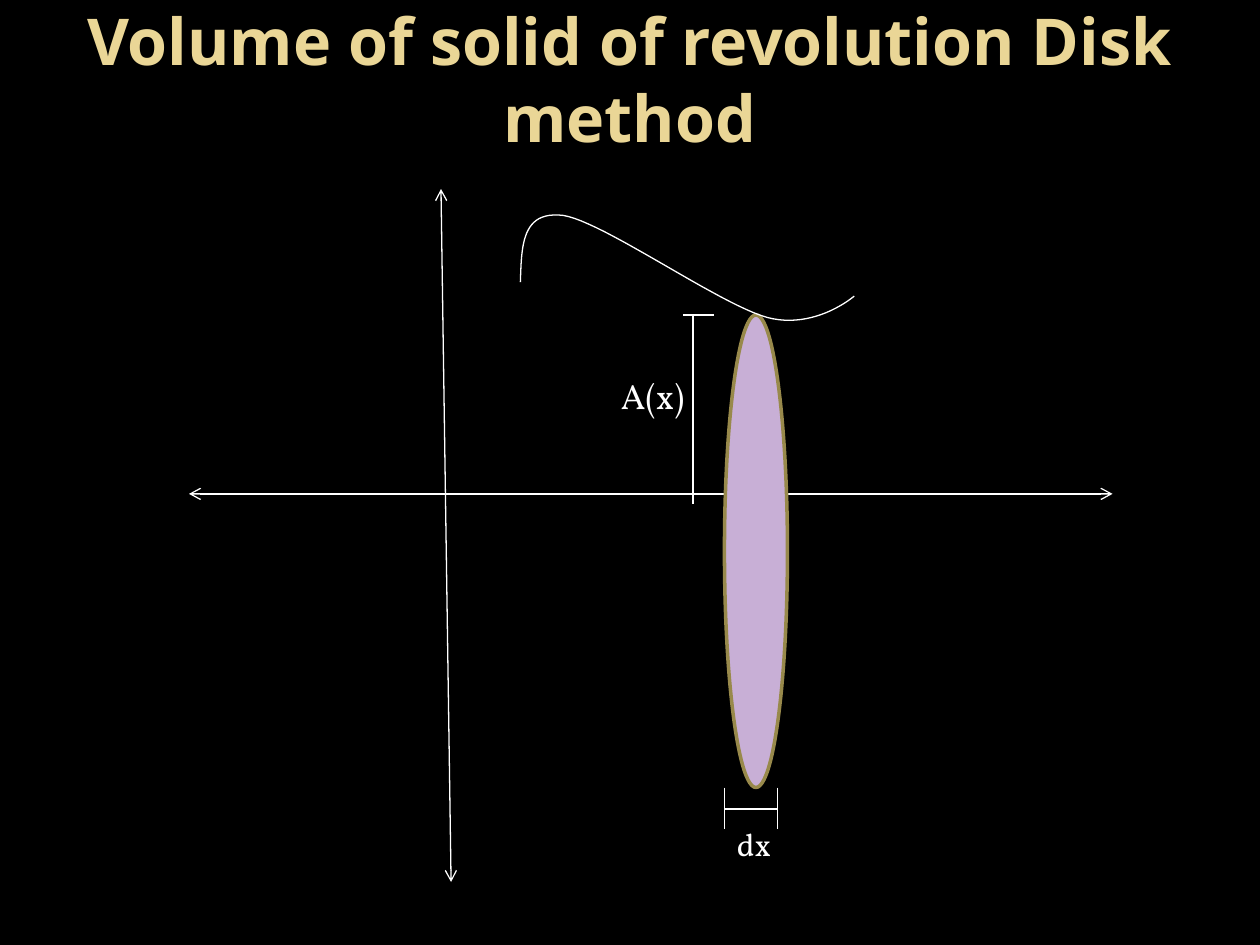
from pptx import Presentation
from pptx.dml.color import RGBColor
from pptx.enum.shapes import MSO_CONNECTOR as Connector, MSO_SHAPE as Shape
from pptx.enum.text import MSO_ANCHOR as Anchor, PP_ALIGN as Align
from pptx.util import Inches, Pt
from lxml.etree import SubElement
from pptx.oxml.ns import qn

WHITE, GOLD, OLIVE, LILAC = "FFFFFF", "EAD696", "98894B", "C8AFD6"


def color(value):
    return RGBColor.from_string(value)


def bezier(start, first, second, end, steps=24):
    """Points along a cubic curve, without its start."""
    for step in range(1, steps + 1):
        t = step / steps
        u = 1 - t
        yield tuple(u**3 * a + 3 * u * u * t * b + 3 * u * t * t * c + t**3 * d
                    for a, b, c, d in zip(start, first, second, end))


class Sketch:
    thin = 0.75

    def __init__(self, page, background):
        self.page = page
        page.background.fill.solid()
        page.background.fill.fore_color.rgb = color(background)

    def stroke(self, line, value=WHITE, width=thin):
        line.color.rgb = color(value)
        line.width = Pt(width)

    def line(self, x1, y1, x2, y2, arrows=False):
        connector = self.page.shapes.add_connector(
            Connector.STRAIGHT, Inches(x1), Inches(y1), Inches(x2), Inches(y2))
        self.stroke(connector.line)
        if arrows:
            outline = connector.line._get_or_add_ln()
            for end in ("a:headEnd", "a:tailEnd"):
                SubElement(outline, qn(end), type="arrow")
        SubElement(connector._element.spPr, qn("a:effectLst"))

    def ellipse(self, left, top, width, height, fill, outline):
        shape = self.page.shapes.add_shape(
            Shape.OVAL, Inches(left), Inches(top), Inches(width), Inches(height))
        shape.shadow.inherit = False
        shape.fill.solid()
        shape.fill.fore_color.rgb = color(fill)
        self.stroke(shape.line, outline, 2)

    def curve(self, start, *segments):
        points = [start]
        for segment in segments:
            points.extend(bezier(points[-1], *segment))
        builder = self.page.shapes.build_freeform(
            Inches(start[0]), Inches(start[1]), scale=1.0)
        builder.add_line_segments(
            [(Inches(x), Inches(y)) for x, y in points[1:]], close=False)
        shape = builder.convert_to_shape()
        shape.shadow.inherit = False
        shape.fill.background()
        self.stroke(shape.line)

    def text(self, left, top, width, height, words, size, font="Vollkorn",
             value=WHITE, bold=False, align=Align.LEFT, anchor=Anchor.TOP,
             bottom=0.05):
        box = self.page.shapes.add_textbox(
            Inches(left), Inches(top), Inches(width), Inches(height))
        frame = box.text_frame
        frame.word_wrap = True
        frame.vertical_anchor = anchor
        frame.margin_bottom = Inches(bottom)
        para = frame.paragraphs[0]
        para.text = words
        para.alignment = align
        para.font.name, para.font.size, para.font.bold = font, Pt(size), bold
        para.font.color.rgb = color(value)


def main():
    deck = Presentation()
    deck.slide_width, deck.slide_height = Inches(10), Inches(7.5)
    sketch = Sketch(deck.slides.add_slide(deck.slide_layouts[6]), "000000")

    # Title, raised by a deep bottom margin
    sketch.text(0.5, 0.3, 9, 1.25, "Volume of solid of revolution Disk method",
                36.9, "Noto Sans", GOLD, True, Align.CENTER, Anchor.MIDDLE, 0.66)

    # Axes
    sketch.line(1.5, 3.92, 8.83, 3.92, arrows=True)
    sketch.line(3.5, 1.5, 3.58, 7, arrows=True)

    # Disk and the curve that bounds it
    sketch.ellipse(5.75, 2.5, 0.5, 3.75, LILAC, OLIVE)
    sketch.curve((4.13, 2.24),
                 ((4.14, 1.95), (4.14, 1.67), (4.47, 1.71)),
                 ((4.79, 1.76), (5.7, 2.41), (6.09, 2.52)),
                 ((6.47, 2.62), (6.78, 2.35), (6.78, 2.35)))

    # Radius mark
    sketch.line(5.42, 2.5, 5.67, 2.5)
    sketch.line(5.5, 2.5, 5.5, 4)
    sketch.text(4.83, 2.92, 0.83, 0.44, "A(x)", 20)

    # Thickness mark
    left, right = 5.75, 6.17
    for x in (left, right):
        sketch.line(x, 6.25, x, 6.58)
    sketch.line(left, 6.42, right, 6.42)
    sketch.text(5.75, 6.5, 0.5, 0.4, "dx", 18)

    deck.save("out.pptx")


if __name__ == "__main__":
    main()
